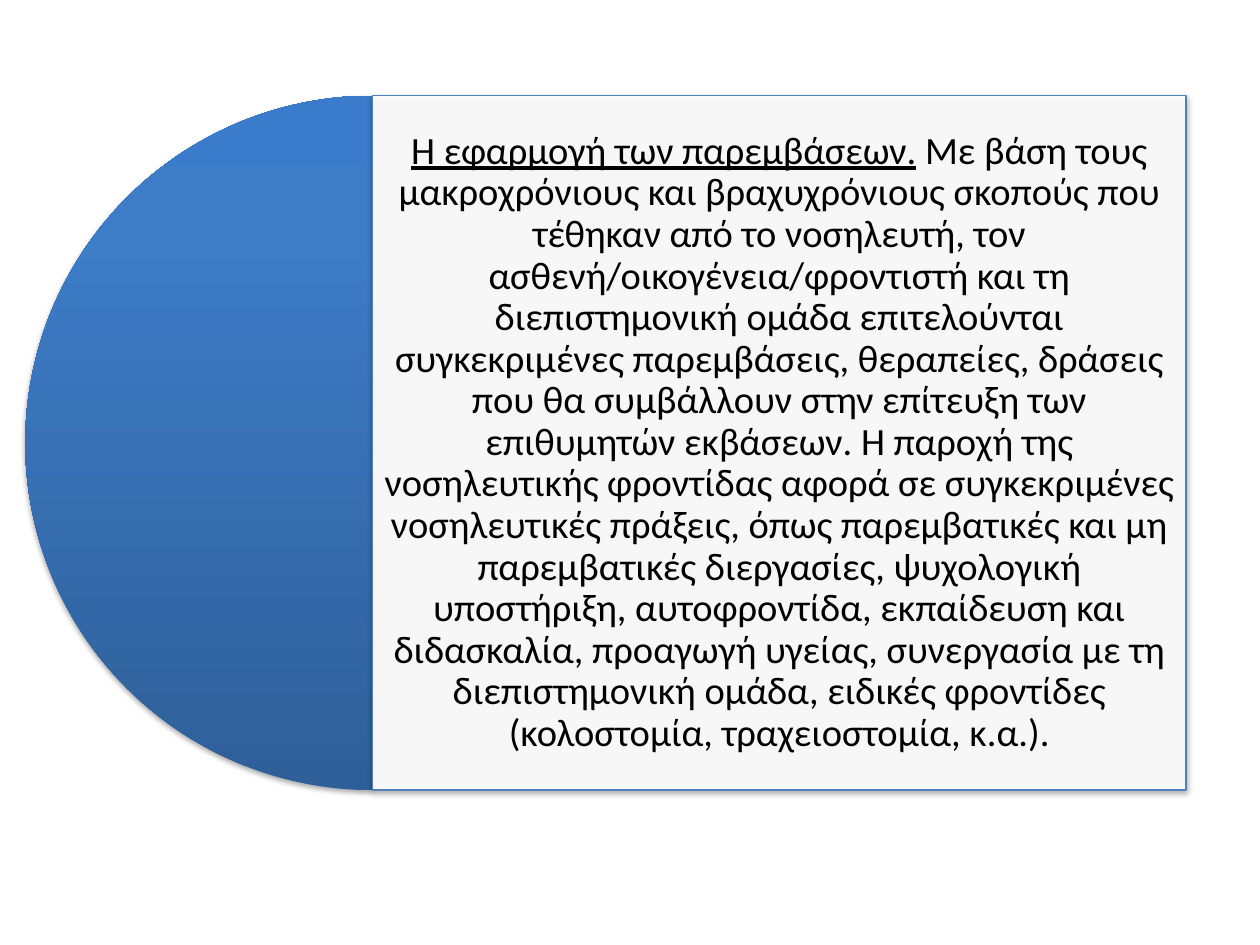
from lxml.etree import SubElement
from pptx import Presentation
from pptx.dml.color import RGBColor
from pptx.enum.shapes import MSO_SHAPE as Preset
from pptx.enum.text import MSO_ANCHOR as Anchor, PP_ALIGN as Align
from pptx.oxml.ns import qn
from pptx.util import Cm, Pt

# Layout in cm: the panel starts at the centre of the half disc
DISC_LEFT, TOP, DIAMETER = 0.51, 1.93, 14
PANEL_LEFT, PANEL_WIDTH = DISC_LEFT + DIAMETER / 2, 16.4

HEADING = "Η εφαρμογή των παρεμβάσεων."
DESCRIPTION = (
    " Με βάση τους μακροχρόνιους και βραχυχρόνιους σκοπούς που τέθηκαν από το "
    "νοσηλευτή, τον ασθενή/οικογένεια/φροντιστή και τη διεπιστημονική ομάδα "
    "επιτελούνται συγκεκριμένες παρεμβάσεις, θεραπείες, δράσεις που θα συμβάλλουν "
    "στην επίτευξη των επιθυμητών εκβάσεων. Η παροχή της νοσηλευτικής φροντίδας "
    "αφορά σε συγκεκριμένες νοσηλευτικές πράξεις, όπως παρεμβατικές και μη "
    "παρεμβατικές διεργασίες, ψυχολογική υποστήριξη, αυτοφροντίδα, εκπαίδευση και "
    "διδασκαλία, προαγωγή υγείας, συνεργασία με τη διεπιστημονική ομάδα, ειδικές "
    "φροντίδες (κολοστομία, τραχειοστομία, κ.α.)."
)


def rgb(value):
    return RGBColor.from_string(value)


def add_color(parent, value, alpha=None):
    color = SubElement(parent, qn("a:srgbClr"), val=value)
    if alpha is not None:
        SubElement(color, qn("a:alpha"), val=str(alpha * 1000))


def add_shadowed(slide, preset, left, width):
    """Add a shape with a soft shadow straight below it."""
    shape = slide.shapes.add_shape(preset, Cm(left), Cm(TOP), Cm(width), Cm(DIAMETER))
    shape.shadow.inherit = False
    effects = shape.element.spPr.find(qn("a:effectLst"))
    shadow = SubElement(effects, qn("a:outerShdw"), blurRad=str(Pt(3.1)),
                        dist=str(Pt(1.8)), dir="5400000", rotWithShape="0")
    add_color(shadow, "000000", 35)
    return shape


def add_half_disc(slide):
    disc = add_shadowed(slide, Preset.PIE, DISC_LEFT, DIAMETER)
    disc.adjustments[0], disc.adjustments[1] = 54, 162  # 90 to 270 degrees
    disc.line.fill.background()

    # Three-stop gradient, dark at the bottom
    disc.fill.gradient()
    disc.fill.gradient_angle = 90
    stops = disc.element.spPr.find(".//" + qn("a:gsLst"))
    stops.clear()
    for percent, color in ((0, "2F5F99"), (80, "3D7CC7"), (100, "3A7CCB")):
        add_color(SubElement(stops, qn("a:gs"), pos=str(percent * 1000)), color)


def add_panel(slide):
    panel = add_shadowed(slide, Preset.RECTANGLE, PANEL_LEFT, PANEL_WIDTH)
    panel.fill.solid()
    panel.fill.fore_color.rgb = rgb("FFFFFF")
    white = panel.element.spPr.find(qn("a:solidFill")).find(qn("a:srgbClr"))
    SubElement(white, qn("a:alpha"), val="90000")
    panel.line.color.rgb = rgb("4F81BD")
    panel.line.width = Pt(0.75)

    # Underlined heading that runs on into the description
    frame = panel.text_frame
    frame.word_wrap = True
    frame.vertical_anchor = Anchor.MIDDLE
    frame.margin_left = frame.margin_right = Cm(0.23)
    frame.margin_top = frame.margin_bottom = Cm(0.23)
    paragraph = frame.paragraphs[0]
    paragraph.alignment = Align.CENTER
    paragraph.line_spacing = 0.9
    paragraph.font.name = "Calibri"
    paragraph.font.size = Pt(22)
    paragraph.font.color.rgb = rgb("000000")
    heading = paragraph.add_run()
    heading.text = HEADING
    heading.font.underline = True
    paragraph.add_run().text = DESCRIPTION


def main():
    deck = Presentation()
    deck.slide_width, deck.slide_height = Cm(25.4), Cm(19.05)
    slide = deck.slides.add_slide(deck.slide_layouts[6])
    add_half_disc(slide)
    add_panel(slide)
    deck.save("out.pptx")


if __name__ == "__main__":
    main()
